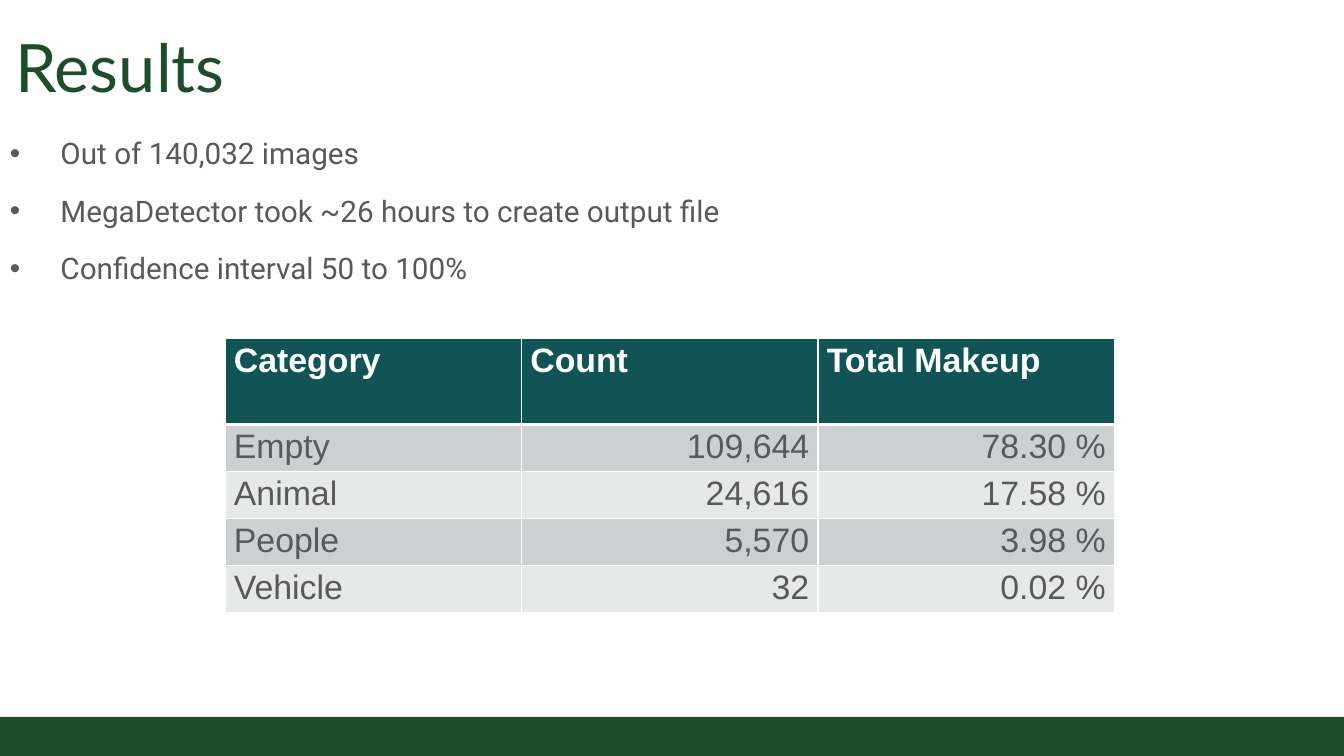
from lxml import etree
from pptx import Presentation
from pptx.dml.color import RGBColor
from pptx.enum import shapes, text
from pptx.oxml import ns
from pptx.util import Inches, Pt

COLORS = {
    "green": "1E4D2B",
    "teal": "105456",
    "gray": "59595B",
    "dark_band": "CCD0D0",
    "light_band": "E7E9E9",
    "white": "FFFFFF",
}
BULLETS = [
    "Out of 140,032 images",
    "MegaDetector took ~26 hours to create output file",
    "Confidence interval 50 to 100%",
]
ROWS = [
    ("Category", "Count", "Total Makeup"),
    ("Empty", "109,644", "78.30 %"),
    ("Animal", "24,616", "17.58 %"),
    ("People", "5,570", "3.98 %"),
    ("Vehicle", "32", "0.02 %"),
]


def rgb(name):
    return RGBColor.from_string(COLORS[name])


def add_run(p, words, font, size, color, bold=False):
    r = p.add_run()
    r.text = words
    r.font.name = font
    r.font.size = Pt(size)
    r.font.bold = bold
    r.font.color.rgb = rgb(color)


def add_xml(parent, tag, **attributes):
    return etree.SubElement(parent, ns.qn(tag), **attributes)


def place(sp, left, top, width, height):
    sp.left, sp.top = Inches(left), Inches(top)
    sp.width, sp.height = Inches(width), Inches(height)


def setup_frame(sp, side, edge, anchor):
    tf = sp.text_frame
    tf.word_wrap = True
    tf.auto_size = text.MSO_AUTO_SIZE.NONE
    tf.vertical_anchor = anchor
    tf.margin_left = tf.margin_right = Inches(side)
    tf.margin_top = tf.margin_bottom = Inches(edge)
    return tf


def add_footer_bar(s):
    sp = s.shapes.add_shape(shapes.MSO_SHAPE.RECTANGLE, Inches(0), Inches(8.06),
                            Inches(15.11), Inches(0.44))
    sp.shadow.inherit = False
    sp.fill.solid()
    sp.fill.fore_color.rgb = rgb("green")
    sp.line.fill.background()


def fill_title(sp):
    place(sp, 0.07, 0.19, 13.74, 1.1)
    tf = setup_frame(sp, 0.1, 0.1, text.MSO_ANCHOR.BOTTOM)
    p = tf.paragraphs[0]
    p.alignment = text.PP_ALIGN.LEFT
    add_run(p, "Results", "Lato", 54, "green")


def fill_bullets(sp):
    place(sp, 0, 1.38, 13.74, 2.99)
    tf = setup_frame(sp, 0.11, 0.06, text.MSO_ANCHOR.TOP)
    for i, words in enumerate(BULLETS):
        p = tf.add_paragraph() if i else tf.paragraphs[0]
        pPr = p._p.get_or_add_pPr()
        pPr.set("marL", str(Inches(0.57)))
        pPr.set("indent", str(-Inches(0.57)))
        add_xml(add_xml(pPr, "a:buClr"), "a:srgbClr", val=COLORS["gray"])
        add_xml(pPr, "a:buFont", typeface="Arial")
        add_xml(pPr, "a:buChar", char="•")
        p.line_spacing = 1.2
        p.space_before = Pt(6 if i else 0)
        p.space_after = Pt(6)
        add_run(p, words, "Roboto", 24, "gray")


def set_borders(cell, **widths):
    tcPr = cell._tc.get_or_add_tcPr()
    for side in "LRTB":
        line = add_xml(tcPr, f"a:ln{side}", w=str(Pt(widths.get(side, 0.96))))
        add_xml(add_xml(line, "a:solidFill"), "a:srgbClr", val=COLORS["white"])


def fill_cell(cell, words, row, col):
    header = row == 0
    cell.margin_left = cell.margin_right = Inches(0.1)
    cell.margin_top = cell.margin_bottom = Inches(0.04)
    # The header is set apart by a thicker rule
    set_borders(cell, **({"B": 3} if header else {"T": 3} if row == 1 else {}))
    cell.fill.solid()
    band = "dark_band" if row % 2 else "light_band"
    cell.fill.fore_color.rgb = rgb("teal" if header else band)
    p = cell.text_frame.paragraphs[0]
    if col and not header:
        p.alignment = text.PP_ALIGN.RIGHT
    add_run(p, words, "Arial", 27.4, "white" if header else "gray", header)


def add_results_table(s):
    table = s.shapes.add_table(len(ROWS), len(ROWS[0]), Inches(2.53), Inches(3.81),
                               Inches(10), Inches(3.06)).table
    for column in table.columns:
        column.width = Inches(10 / len(ROWS[0]))
    for i, words in enumerate(ROWS):
        table.rows[i].height = Inches(0.53 if i else 0.96)
        for j, word in enumerate(words):
            fill_cell(table.cell(i, j), word, i, j)


def main():
    prs = Presentation()
    prs.slide_width, prs.slide_height = Inches(15.11), Inches(8.5)
    s = prs.slides.add_slide(prs.slide_layouts[1])

    # Heading and key facts
    fill_title(s.shapes.title)
    fill_bullets(s.placeholders[1])

    # Detection counts and footer
    add_results_table(s)
    add_footer_bar(s)
    prs.save("out.pptx")


if __name__ == "__main__":
    main()
